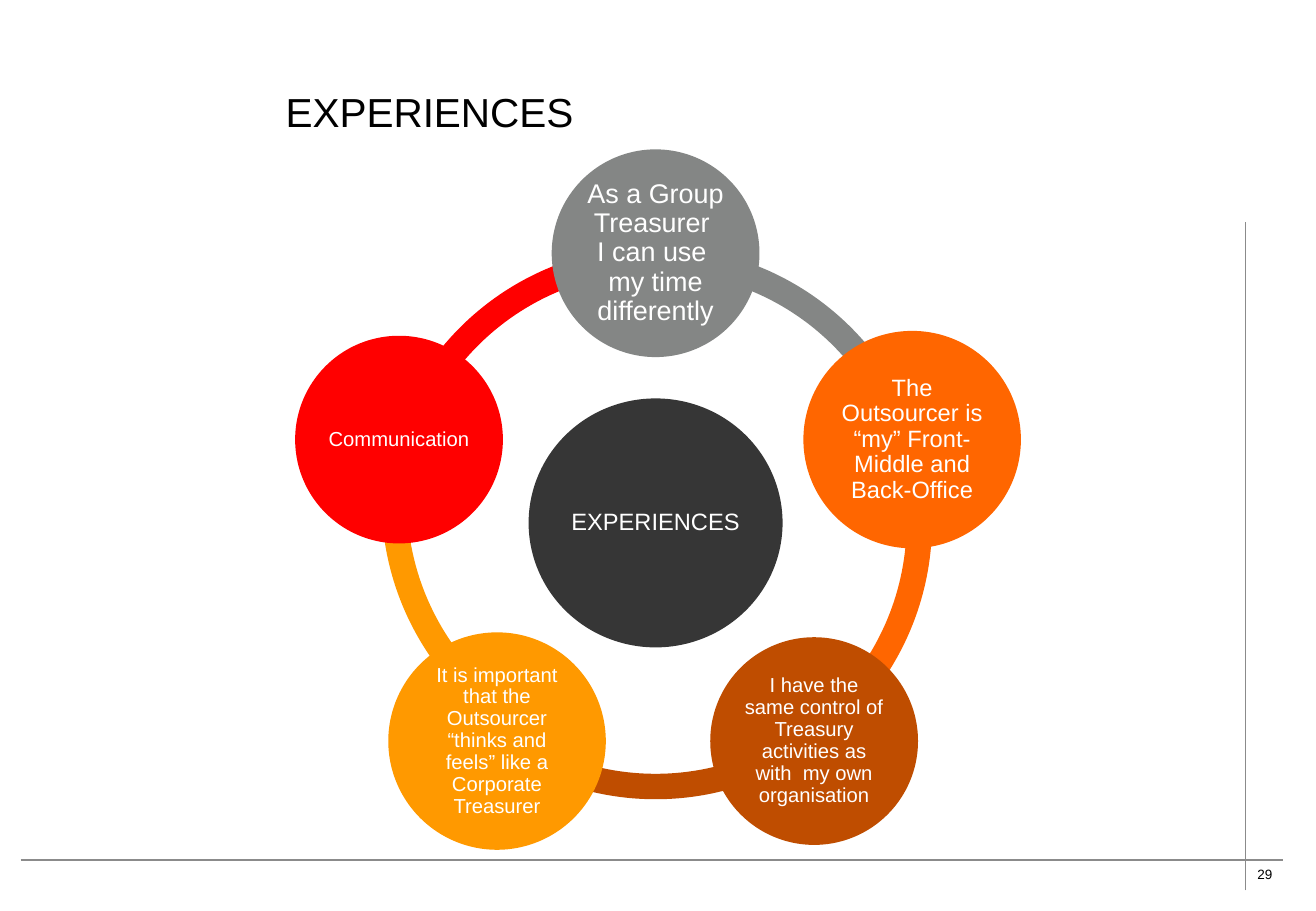
from math import cos, radians, sin

from lxml.etree import SubElement
from pptx import Presentation
from pptx.dml.color import RGBColor
from pptx.enum.shapes import MSO_CONNECTOR, MSO_SHAPE
from pptx.enum.text import MSO_ANCHOR, PP_ALIGN
from pptx.oxml.ns import qn
from pptx.util import Inches, Pt

BLACK = RGBColor(0x00, 0x00, 0x00)
WHITE = RGBColor(0xFF, 0xFF, 0xFF)
CHARCOAL = RGBColor(0x36, 0x36, 0x36)
RULE = RGBColor(0x8B, 0x8B, 0x8B)
GREY = RGBColor(0x84, 0x86, 0x85)
ORANGE = RGBColor(0xFF, 0x66, 0x00)
BROWN = RGBColor(0xBF, 0x4D, 0x00)
AMBER = RGBColor(0xFF, 0x99, 0x00)
RED = RGBColor(0xFF, 0x00, 0x00)

FONT = "Arial"
RING = (3.12, 2.03, 4.55)
ORBIT = 2.22
BAND = 0.046
FIRST_ANGLE = 270
EXPERIENCES = [
    (["As a Group Treasurer ", "I can use ", "my time differently"], 16, 1.71, GREY, (0, 0)),
    (["The Outsourcer is “my” Front- Middle and Back-Office"], 14, 1.79, ORANGE, (0, 0)),
    (["I have the same control of Treasury activities as with  my own organisation"],
     12, 1.71, BROWN, (0, 0)),
    (["It is important that the Outsourcer “thinks and feels” like a Corporate Treasurer"],
     12, 1.79, AMBER, (0.02, -0.19)),
    (["Communication"], 12, 1.71, RED, (0, 0)),
]


def add_run(p, text, size, color):
    """Add one run of text in the slide font."""
    r = p.add_run()
    r.text = text
    r.font.name = FONT
    r.font.size = Pt(size)
    r.font.color.rgb = color


def add_plain_shape(s, kind, x, y, w, h, color):
    """Add a flat shape without outline or shadow."""
    sp = s.shapes.add_shape(kind, Inches(x), Inches(y), Inches(w), Inches(h))
    sp.shadow.inherit = False
    sp.fill.solid()
    sp.fill.fore_color.rgb = color
    sp.line.fill.background()
    return sp


def add_circle(s, cx, cy, w, h, color, lines, size):
    """Add an ellipse around a centre point with centred white text."""
    sp = add_plain_shape(s, MSO_SHAPE.OVAL, cx - w / 2, cy - h / 2, w, h, color)
    tf = sp.text_frame
    tf.word_wrap = True
    tf.vertical_anchor = MSO_ANCHOR.MIDDLE
    tf.margin_left = tf.margin_right = tf.margin_top = tf.margin_bottom = Inches(0.02)
    p = tf.paragraphs[0]
    p.alignment = PP_ALIGN.CENTER
    p.line_spacing = 0.9
    for i, line in enumerate(lines):
        if i:
            p.add_line_break()
        add_run(p, line, size, WHITE)


def add_rule(s, x1, y1, x2, y2):
    """Add a thin grey line of the page frame."""
    line = s.shapes.add_connector(
        MSO_CONNECTOR.STRAIGHT, Inches(x1), Inches(y1), Inches(x2), Inches(y2))
    line.line.color.rgb = RULE
    line.line.width = Pt(1)
    SubElement(line._element.spPr, qn("a:effectLst"))


def add_frame(s, x, y, right, top, bottom, number):
    """Add the two page rules and the slide number where they cross."""
    add_rule(s, 0.17, y, right, y)
    add_rule(s, x, bottom, x, top)
    box = s.shapes.add_textbox(Inches(x), Inches(y), Inches(0.34), Inches(0.23))
    box.text_frame.word_wrap = False
    add_run(box.text_frame.paragraphs[0], number, 8, BLACK)


def add_title(s, text, x, y, w, h):
    """Place and fill the title placeholder."""
    title = s.shapes.title
    title.left, title.top, title.width, title.height = map(Inches, (x, y, w, h))
    tf = title.text_frame
    tf.vertical_anchor = MSO_ANCHOR.MIDDLE
    p = tf.paragraphs[0]
    p.alignment = PP_ALIGN.LEFT
    add_run(p, text, 24, BLACK)


def add_cycle(s, x, y, size):
    """Draw the ring of arcs, the hub and the circles on the orbit."""
    cx, cy = x + size / 2, y + size / 2
    step = 360 / len(EXPERIENCES)
    for i, (_, _, _, color, (dx, dy)) in enumerate(EXPERIENCES):
        start = FIRST_ANGLE + i * step
        arc = add_plain_shape(s, MSO_SHAPE.BLOCK_ARC, x + dx, y + dy, size, size, color)
        arc.adjustments[0] = start % 360 * 0.6
        arc.adjustments[1] = (start + step) % 360 * 0.6
        arc.adjustments[2] = BAND
    add_circle(s, cx, cy, 2.09, 2.05, CHARCOAL, ["EXPERIENCES"], 14)
    for i, (lines, pts, d, color, _) in enumerate(EXPERIENCES):
        angle = radians(FIRST_ANGLE + i * step)
        add_circle(s, cx + ORBIT * cos(angle), cy + ORBIT * sin(angle), d, d, color, lines, pts)


def main():
    """Build the slide and save it."""
    prs = Presentation()
    prs.slide_width, prs.slide_height = Inches(10.83), Inches(7.5)
    s = prs.slides.add_slide(prs.slide_layouts[5])
    add_frame(s, 10.25, 7.08, 10.56, 1.83, 7.33, "29")
    add_title(s, "EXPERIENCES", 2.25, 0.42, 7.83, 1)
    add_cycle(s, *RING)
    prs.save("out.pptx")


if __name__ == "__main__":
    main()
